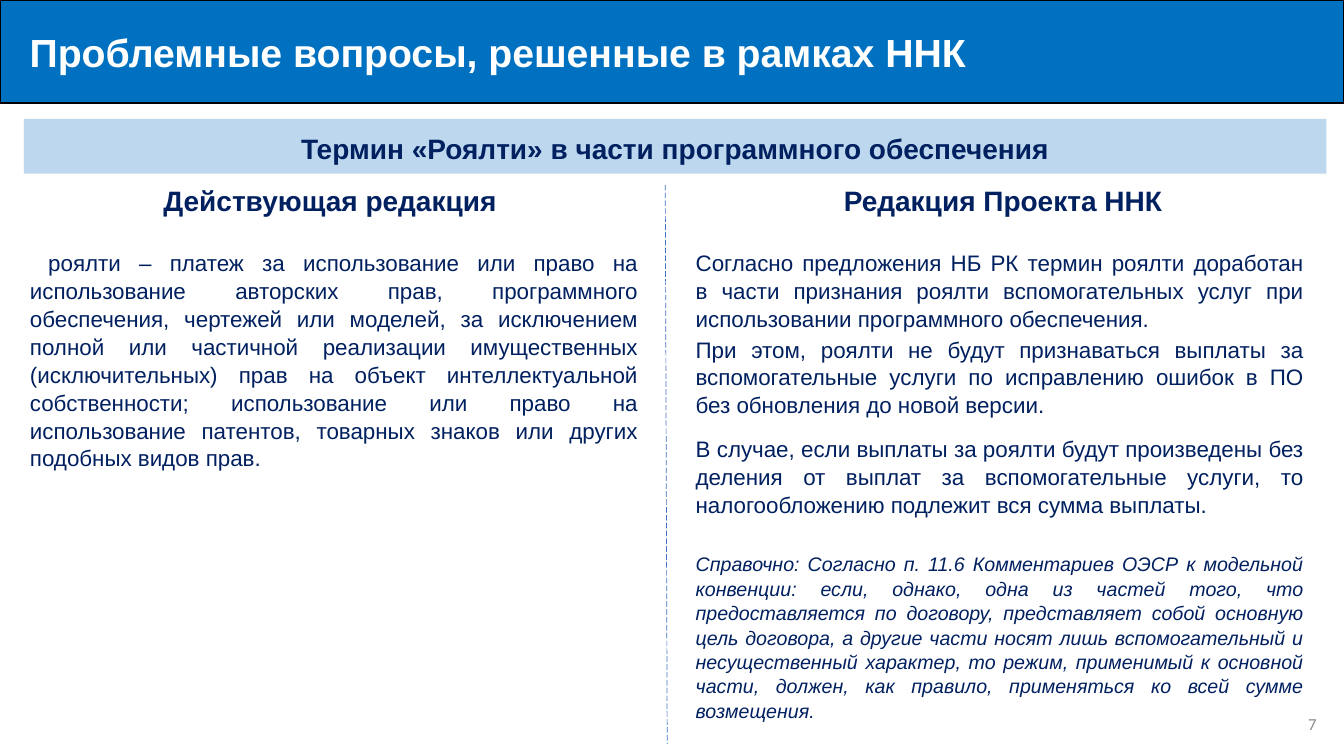
from lxml.etree import SubElement
from pptx import Presentation
from pptx.dml.color import RGBColor
from pptx.enum.dml import MSO_LINE
from pptx.enum.shapes import MSO_CONNECTOR, MSO_SHAPE
from pptx.enum.text import MSO_ANCHOR, MSO_AUTO_SIZE, PP_ALIGN
from pptx.oxml.ns import qn
from pptx.util import Pt

NAVY = "002060"
COLUMN_TOP, HEADING_TOP = 173.5, 124
CURRENT_TERM = [
    "роялти – платеж за использование или право на использование авторских прав, "
    "программного обеспечения, чертежей или моделей, за исключением полной или частичной "
    "реализации имущественных (исключительных) прав на объект интеллектуальной собственности; "
    "использование или право на использование патентов, товарных знаков или других подобных "
    "видов прав.",
]
PROPOSED_TERM = [
    "Согласно предложения НБ РК термин роялти доработан в части признания роялти "
    "вспомогательных услуг при использовании программного обеспечения.",
    "При этом, роялти не будут признаваться выплаты за вспомогательные услуги по исправлению "
    "ошибок в ПО без обновления до новой версии.",
    "В случае, если выплаты за роялти будут произведены без деления от выплат за "
    "вспомогательные услуги, то налогообложению подлежит вся сумма выплаты.",
    "Справочно: Согласно п. 11.6 Комментариев ОЭСР к модельной конвенции: если, однако, одна "
    "из частей того, что предоставляется по договору, представляет собой основную цель "
    "договора, а другие части носят лишь вспомогательный и несущественный характер, то режим, "
    "применимый к основной части, должен, как правило, применяться ко всей сумме возмещения.",
]


def color(hex_value):
    return RGBColor.from_string(hex_value)


def place(shape, left, top, width, height):
    shape.left, shape.top = Pt(left), Pt(top)
    shape.width, shape.height = Pt(width), Pt(height)


def prepare_frame(shape, anchor):
    frame = shape.text_frame
    frame.word_wrap = True
    frame.auto_size = MSO_AUTO_SIZE.NONE
    frame.vertical_anchor = anchor
    return frame


def format_paragraph(paragraph, size, hex_value=NAVY, align=PP_ALIGN.LEFT, bold=False,
                     italic=False, spacing=1.0, indent=0, first_line=0, before=0, after=0):
    """Style one paragraph, without a bullet."""
    paragraph.alignment = align
    paragraph.line_spacing = spacing
    paragraph.space_before, paragraph.space_after = Pt(before), Pt(after)
    properties = paragraph._p.get_or_add_pPr()
    properties.set("marL", str(Pt(indent)))
    properties.set("indent", str(Pt(first_line)))
    SubElement(properties, qn("a:buNone"))
    for run in paragraph.runs:
        run.font.name, run.font.size = "Arial", Pt(size)
        run.font.bold, run.font.italic = bold, italic
        run.font.color.rgb = color(hex_value)


def fill_title(title, text):
    place(title, 0, 0, 960, 73.5)
    title.fill.solid()
    title.fill.fore_color.rgb = color("0070C0")
    title.line.color.rgb = color("000000")
    title.line.width = Pt(1)
    frame = prepare_frame(title, MSO_ANCHOR.MIDDLE)
    frame.text = text
    format_paragraph(frame.paragraphs[0], 28, "FFFFFF", bold=True, indent=14)


def add_topic_band(slide, text):
    band = slide.shapes.add_shape(MSO_SHAPE.RECTANGLE, Pt(17), Pt(85), Pt(930.5), Pt(39))
    band.shadow.inherit = False
    band.fill.solid()
    band.fill.fore_color.rgb = color("BDD7EE")
    band.line.fill.background()
    frame = prepare_frame(band, MSO_ANCHOR.MIDDLE)
    frame.text = text
    format_paragraph(frame.paragraphs[0], 20, align=PP_ALIGN.CENTER, bold=True, spacing=1.14)


def fill_heading(heading, text, left, width):
    place(heading, left, HEADING_TOP, width, 32.5)
    frame = prepare_frame(heading, MSO_ANCHOR.TOP)
    frame.text = text
    format_paragraph(frame.paragraphs[0], 20, align=PP_ALIGN.CENTER, bold=True, spacing=1.14)


def fill_column(column, texts, left, height, first_line=0, gaps=(0,), note_index=None):
    """Fill a justified column; gaps holds the space before each paragraph."""
    place(column, left, COLUMN_TOP, 463, height)
    frame = prepare_frame(column, MSO_ANCHOR.TOP)
    frame.text = "\n".join(texts)
    for index, (paragraph, gap) in enumerate(zip(frame.paragraphs, gaps)):
        is_note = index == note_index
        format_paragraph(paragraph, 14 if is_note else 16, align=PP_ALIGN.JUSTIFY,
                         italic=is_note, spacing=1.04, indent=14.2,
                         first_line=first_line, before=gap, after=2)


def add_divider(slide):
    divider = slide.shapes.add_connector(
        MSO_CONNECTOR.STRAIGHT, Pt(475.2), Pt(132), Pt(476.6), Pt(531.5))
    divider.line.color.rgb = color("4472C4")
    divider.line.width = Pt(0.5)
    divider.line.dash_style = MSO_LINE.LONG_DASH
    SubElement(divider._element.spPr, qn("a:effectLst"))


def add_page_number(slide, number):
    page = slide.shapes.add_textbox(Pt(731.5), Pt(502.5), Pt(216), Pt(28.8))
    frame = prepare_frame(page, MSO_ANCHOR.MIDDLE)
    frame.text = number
    format_paragraph(frame.paragraphs[0], 12, "8C8C8C", PP_ALIGN.RIGHT)
    frame.paragraphs[0].runs[0].font.name = "Calibri"


def main():
    presentation = Presentation()
    presentation.slide_width, presentation.slide_height = Pt(960), Pt(540)
    comparison_layout = presentation.slide_layouts.get_by_name("Comparison")
    slide = presentation.slides.add_slide(comparison_layout)
    title, current_heading, current, proposed_heading, proposed = slide.placeholders

    fill_title(title, "Проблемные вопросы, решенные в рамках ННК")
    add_topic_band(slide, "Термин «Роялти» в части программного обеспечения")
    fill_heading(current_heading, "Действующая редакция", 0, 471.5)
    fill_heading(proposed_heading, "Редакция Проекта ННК", 476.5, 480)
    fill_column(current, CURRENT_TERM, 0, 183.5, first_line=13)
    fill_column(proposed, PROPOSED_TERM, 475.5, 337, gaps=(0, 0, 9.5, 21.5), note_index=3)
    add_divider(slide)
    add_page_number(slide, "7")
    presentation.save("out.pptx")


if __name__ == "__main__":
    main()
